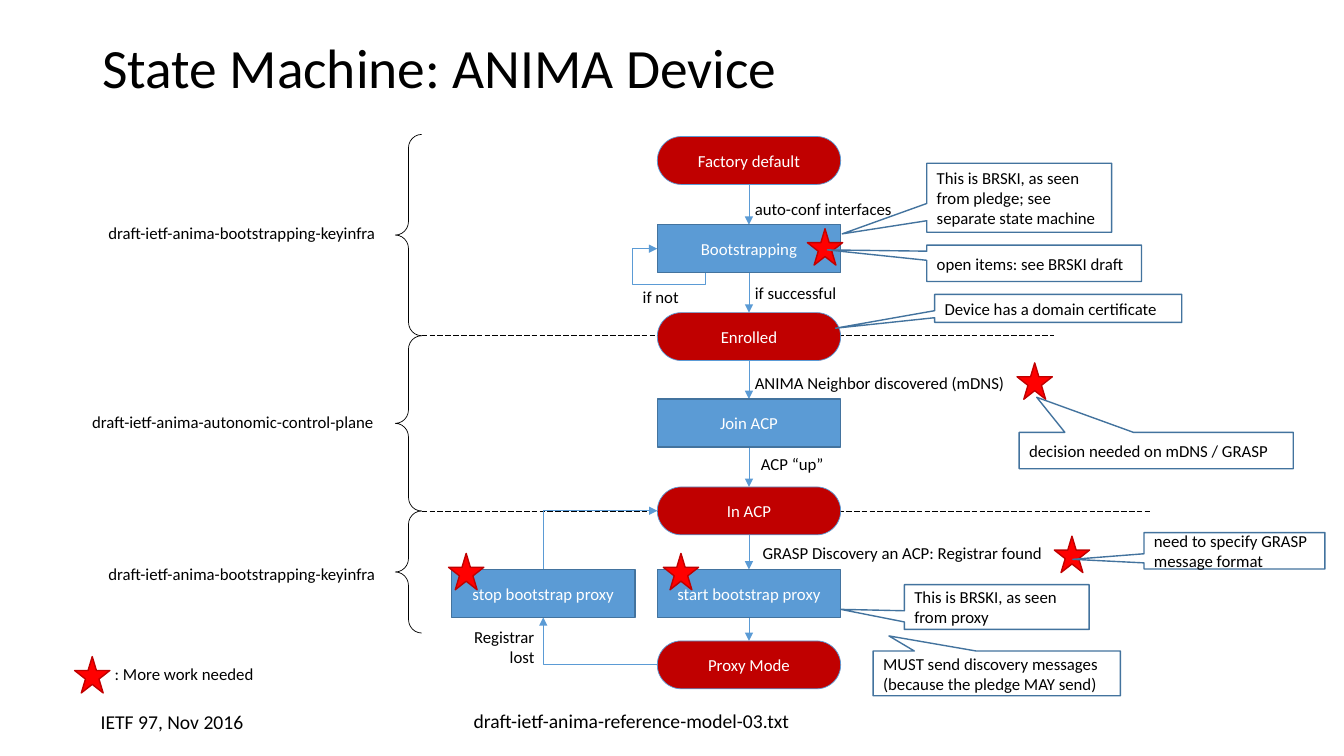
import itertools

import pptx
import pptx.dml.color
import pptx.enum.dml
import pptx.enum.shapes
import pptx.enum.text
import pptx.oxml.ns
import pptx.util
from lxml import etree

Pt = pptx.util.Pt
SHAPE = pptx.enum.shapes.MSO_SHAPE
CONNECTOR = pptx.enum.shapes.MSO_CONNECTOR
ALIGN = pptx.enum.text.PP_ALIGN
ANCHOR = pptx.enum.text.MSO_ANCHOR

FONT = "Calibri"
BLACK, WHITE = "000000", "FFFFFF"
BLUE, DARK_BLUE = "5B9BD5", "43739E"
RED, DARK_RED = "FF0000", "C00000"

# Main column: text, top, kind
STEPS = [
    ("Factory default", 97.5, "state"),
    ("Bootstrapping", 160.5, "action"),
    ("Enrolled", 223.3, "state"),
    ("Join ACP", 285, "action"),
    ("In ACP", 347.8, "state"),
    ("start bootstrap proxy", 406.8, "action"),
    ("Proxy Mode", 457.8, "state"),
]
STEP_LEFT, STOP_LEFT = 469.5, 322.5
STEP_WIDTH, STEP_HEIGHT = 131, 34.2
STOP_TEXT = "stop bootstrap proxy"

# Text, left, top, width, size
LABELS = [
    ("IETF 97, Nov 2016", 64.8, 503.3, 117.4, 14),
    ("draft-ietf-anima-reference-model-03.txt", 331.2, 502.6, 243.4, 14),
    ("auto-conf interfaces", 532.1, 138.6, 113, 12),
    ("if successful", 532.1, 198.4, 73.4, 12),
    ("if not", 452, 201.4, 40.3, 12),
    ("ANIMA Neighbor discovered (mDNS)", 532.1, 262.4, 194.4, 12),
    ("ACP “up”", 536.4, 320.4, 59.8, 12),
    ("GRASP Discovery an ACP: Registrar found", 537.6, 383.8, 216.7, 12),
    ("draft-ietf-anima-bootstrapping-keyinfra", 70.3, 155.8, 211.7, 12),
    ("draft-ietf-anima-autonomic-control-plane", 58.8, 290.9, 221, 12),
    ("draft-ietf-anima-bootstrapping-keyinfra", 70.3, 399.2, 211.7, 12),
    (": More work needed", 74.9, 470.2, 115.2, 12),
]

# Text, box, pointer position
CALLOUTS = [
    ("This is BRSKI, as seen from pledge; see separate state machine",
     (662, 116.6, 132, 49.3), (-0.958, 0.524)),
    ("open items: see BRSKI draft", (662, 175.1, 153.4, 26), (-0.963, -0.369)),
    ("Device has a domain certificate", (667.6, 210.3, 176.5, 20), (-0.901, 0.707)),
    ("decision needed on mDNS / GRASP", (728, 308.8, 195.8, 26), (-0.436, -1.464)),
    ("need to specify GRASP message format",
     (817.2, 380.4, 129.2, 26), (-0.894, 0.236)),
    ("This is BRSKI, as seen from proxy", (646, 417.6, 132, 32), (-0.845, 0.052)),
    ("MUST send discovery messages (because the pledge MAY send)",
     (623.7, 465, 176.6, 32), (-0.436, -0.837)),
]

STARS = [(726.5, 259.2), (753.1, 383), (473.8, 395.3),
         (53.3, 469), (576.7, 163.4), (320.4, 395.3)]
STAR_SIZE = (25.2, 26)

BRACE_LEFT, BRACE_WIDTH = 282.4, 18.8
PHASE_EDGES = [96, 239.8, 365, 452.2]
PHASE_LINE_ENDS = [753.1, 821.5]


def color(hex_text):
    return pptx.dml.color.RGBColor.from_string(hex_text)


def set_line(line, line_color, width):
    line.color.rgb = color(line_color)
    line.width = Pt(width)


def write(shape, lines, size, text_color=BLACK, align=ALIGN.LEFT, wrap=True, spacing=1.0):
    frame = shape.text_frame
    frame.word_wrap = wrap
    for index, text in enumerate(lines):
        paragraph = frame.add_paragraph() if index else frame.paragraphs[0]
        paragraph.alignment = align
        paragraph.line_spacing = spacing
        run = paragraph.add_run()
        run.text = text
        run.font.name = FONT
        run.font.size = Pt(size)
        run.font.color.rgb = color(text_color)
    return frame


def add_label(box, lines, size=12, **options):
    shape = slide.shapes.add_textbox(*map(Pt, box))
    return write(shape, lines, size, **options)


def add_shape(preset, box, fill, line_color, width, adjustments=()):
    shape = slide.shapes.add_shape(preset, *map(Pt, box))
    shape.shadow.inherit = False
    if fill:
        shape.fill.solid()
        shape.fill.fore_color.rgb = color(fill)
    else:
        shape.fill.background()
    set_line(shape.line, line_color, width)
    for index, value in enumerate(adjustments):
        shape.adjustments[index] = value
    return shape


def add_step(text, left, top, kind):
    box = (left, top, STEP_WIDTH, STEP_HEIGHT)
    if kind == "state":
        shape = add_shape(SHAPE.ROUNDED_RECTANGLE, box, DARK_RED, BLUE, 0.5, [0.5])
    else:
        shape = add_shape(SHAPE.RECTANGLE, box, BLUE, DARK_BLUE, 1)
    write(shape, [text], 12, WHITE, ALIGN.CENTER).vertical_anchor = ANCHOR.MIDDLE


def add_line(begin, end, line_color=BLUE, arrow=True, kind=CONNECTOR.STRAIGHT):
    connector = slide.shapes.add_connector(kind, *map(Pt, (*begin, *end)))
    set_line(connector.line, line_color, 0.5)
    if arrow:
        tail = etree.SubElement(connector.line._get_or_add_ln(),
                                pptx.oxml.ns.qn("a:tailEnd"))
        tail.set("type", "triangle")
    etree.SubElement(connector.element.spPr, pptx.oxml.ns.qn("a:effectLst"))
    return connector


def add_elbow(begin, end, preset, rotation, flips=(), adjustments=()):
    """Draw a bent arrow whose frame is turned about the middle of its two ends."""
    width, height = abs(end[0] - begin[0]), abs(end[1] - begin[1])
    if rotation == 90:
        width, height = height, width
    left = (begin[0] + end[0] - width) / 2
    top = (begin[1] + end[1] - height) / 2
    connector = add_line((left, top), (left + width, top + height), kind=CONNECTOR.ELBOW)
    frame = connector.element.spPr.find(pptx.oxml.ns.qn("a:xfrm"))
    frame.set("rot", str(rotation * 60000))
    for flip in flips:
        frame.set(flip, "1")
    geometry = connector.element.spPr.find(pptx.oxml.ns.qn("a:prstGeom"))
    geometry.set("prst", preset)
    values = geometry.find(pptx.oxml.ns.qn("a:avLst"))
    for number, value in enumerate(adjustments, 1):
        guide = etree.SubElement(values, pptx.oxml.ns.qn("a:gd"))
        guide.set("name", f"adj{number}")
        guide.set("fmla", f"val {round(value * 100000)}")


presentation = pptx.Presentation()
presentation.slide_width, presentation.slide_height = Pt(960), Pt(540)
slide = presentation.slides.add_slide(presentation.slide_layouts[6])

for edge, line_end in zip(PHASE_EDGES[1:], PHASE_LINE_ENDS):
    line = add_line((BRACE_LEFT + BRACE_WIDTH, edge), (line_end, edge), BLACK, arrow=False)
    line.line.dash_style = pptx.enum.dml.MSO_LINE.LONG_DASH
for top, bottom in itertools.pairwise(PHASE_EDGES):
    add_shape(SHAPE.LEFT_BRACE, (BRACE_LEFT, top, BRACE_WIDTH, bottom - top),
              None, BLACK, 0.5, [0.516, 0.5])

title = add_label((66, 28.8, 828, 42.5), ["State Machine: ANIMA Device"], 39.6, spacing=0.9)
title.vertical_anchor = ANCHOR.MIDDLE
for text, left, top, width, size in LABELS:
    add_label((left, top, width, size * 1.8), [text], size, wrap=False)
add_label((325.4, 444.2, 63.4, 36), ["Registrar", "lost"], align=ALIGN.RIGHT)

tops = {text: top for text, top, kind in STEPS}
center = STEP_LEFT + STEP_WIDTH / 2
stop_center = STOP_LEFT + STEP_WIDTH / 2
half = STEP_HEIGHT / 2
stop_top = tops["start bootstrap proxy"]

for top, next_top in itertools.pairwise(tops.values()):
    add_line((center, top + STEP_HEIGHT), (center, next_top))
add_elbow((504, tops["Bootstrapping"] + STEP_HEIGHT),
          (STEP_LEFT, tops["Bootstrapping"] + half),
          "bentConnector4", 90, ["flipH"], [-0.492, 1.524])
add_elbow((STEP_LEFT, tops["Proxy Mode"] + half), (stop_center, stop_top + STEP_HEIGHT),
          "bentConnector2", 180)
add_elbow((stop_center, stop_top), (STEP_LEFT, tops["In ACP"] + half),
          "bentConnector2", 90, ["flipH", "flipV"])

for text, top, kind in STEPS:
    add_step(text, STEP_LEFT, top, kind)
add_step(STOP_TEXT, STOP_LEFT, stop_top, "action")
for position in STARS:
    add_shape(SHAPE.STAR_5_POINT, (*position, *STAR_SIZE), RED, DARK_RED, 1)
for text, box, pointer in CALLOUTS:
    callout = add_shape(SHAPE.RECTANGULAR_CALLOUT, box, None, DARK_BLUE, 1, pointer)
    write(callout, [text], 12).vertical_anchor = ANCHOR.MIDDLE

presentation.save("out.pptx")
